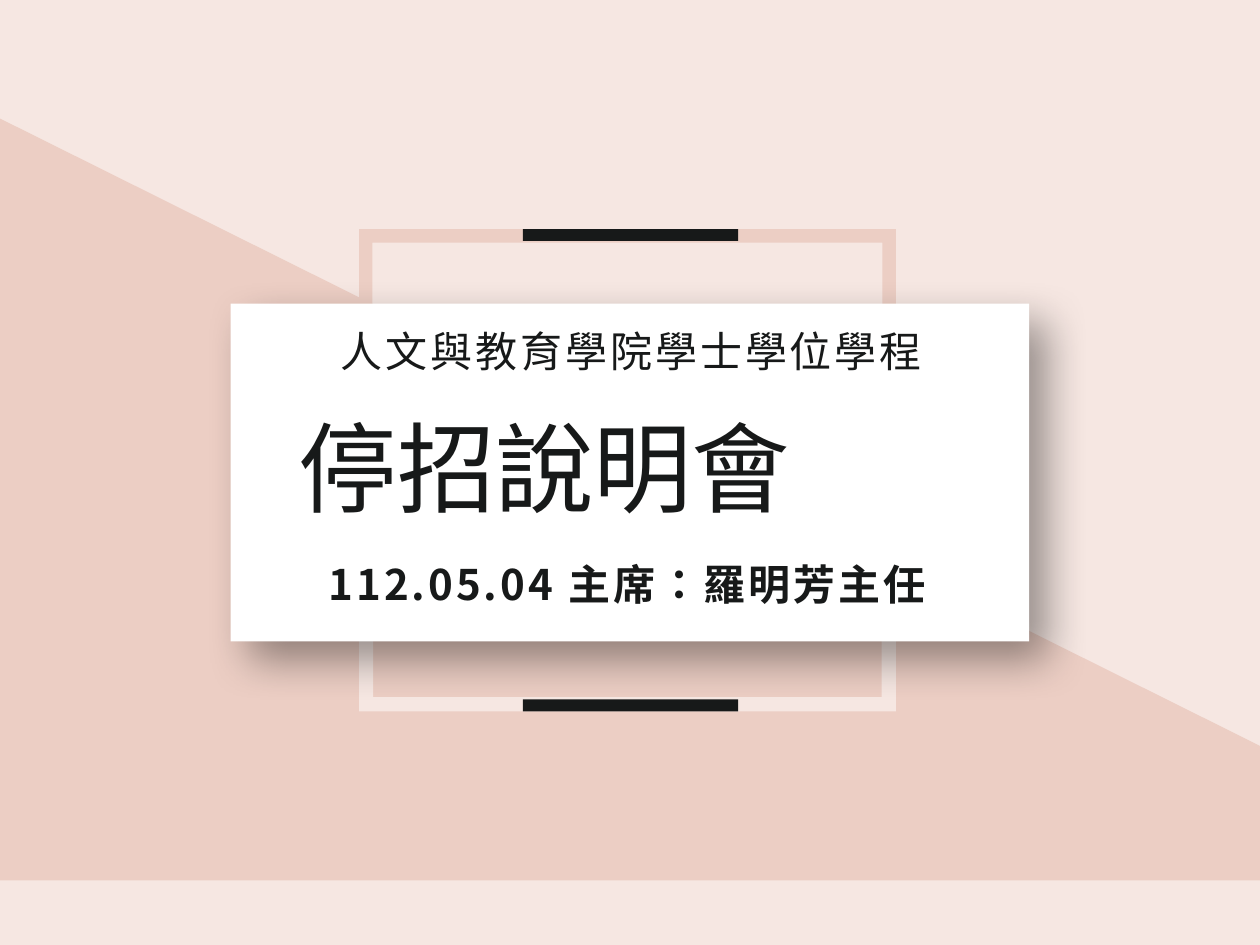
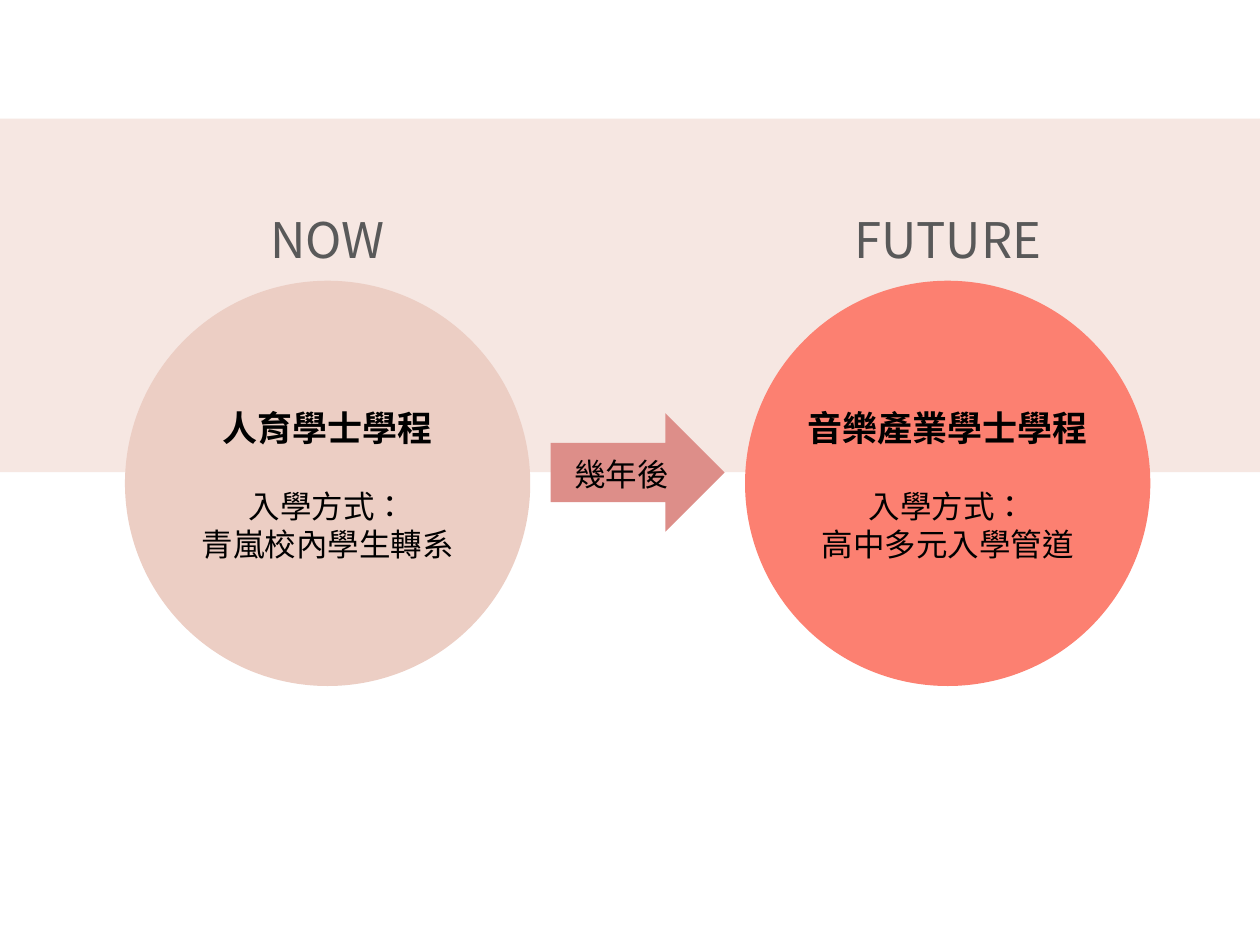
import pptx
import pptx.dml.color
import pptx.enum.shapes
import pptx.enum.text
import pptx.oxml
import pptx.oxml.ns
import pptx.util
from lxml import etree

Cm = pptx.util.Cm
Pt = pptx.util.Pt
RGBColor = pptx.dml.color.RGBColor
SHAPE = pptx.enum.shapes.MSO_SHAPE
ALIGN = pptx.enum.text.PP_ALIGN
qn = pptx.oxml.ns.qn

FONT = "Noto Sans CJK SC"
BLUSH = RGBColor(0xF6, 0xE7, 0xE2)
ROSE = RGBColor(0xEC, 0xCE, 0xC4)
CORAL = RGBColor(0xFC, 0x80, 0x71)
DUSTY = RGBColor(0xDD, 0x8E, 0x89)
INK = RGBColor(0x17, 0x19, 0x19)
GREY = RGBColor(0x59, 0x59, 0x59)
BLACK = RGBColor(0, 0, 0)
WHITE = RGBColor(0xFF, 0xFF, 0xFF)

SLIDE_WIDTH, SLIDE_HEIGHT = 25.4, 19.05
BAND_TOP = 2.39
TITLE_ONLY, BLANK = 5, 6


def add_slide(deck, layout, background):
    slide = deck.slides.add_slide(deck.slide_layouts[layout])
    slide.background.fill.solid()
    slide.background.fill.fore_color.rgb = background
    return slide


def add_block(slide, preset, box, colour):
    block = slide.shapes.add_shape(preset, *map(Cm, box))
    block.shadow.inherit = False
    block.fill.solid()
    block.fill.fore_color.rgb = colour
    block.line.fill.background()
    return block


def cast_shadow(block):
    effects = block._element.spPr.find(qn("a:effectLst"))
    shadow = etree.SubElement(
        effects, qn("a:outerShdw"), blurRad=str(Pt(25)), dist=str(Pt(15)),
        dir=str(45 * 60000), algn="tl", rotWithShape="0")
    colour = etree.SubElement(shadow, qn("a:srgbClr"), val="000000")
    etree.SubElement(colour, qn("a:alpha"), val="38000")


def add_text_box(slide, box, wrap=True):
    frame = slide.shapes.add_textbox(*map(Cm, box)).text_frame
    frame.word_wrap = wrap
    frame.auto_size = pptx.enum.text.MSO_AUTO_SIZE.SHAPE_TO_FIT_TEXT
    return frame


def write(paragraph, text, size, colour, align=ALIGN.CENTER, bold=False, spacing=0):
    paragraph.alignment = align
    run = paragraph.add_run()
    run.text = text
    run.font.size = Pt(size)
    run.font.bold = bold
    run.font.name = FONT
    run.font.color.rgb = colour
    properties = run.font._element
    properties.set("lang", "zh-TW")
    etree.SubElement(properties, qn("a:ea"), typeface=FONT)
    if spacing:
        properties.set("spc", str(int(spacing * 100)))


def add_frames(slide, left, top, width, height):
    for offset, frame_height, colour in ((2.0, height - 2.0, BLUSH), (0, 7.32, ROSE)):
        frame = add_block(slide, SHAPE.FRAME, (left, top + offset, width, frame_height), colour)
        frame.adjustments[0] = 0.037


def add_accents(slide, left, top, width, height):
    bar_width, bar_height = 4.34, 0.24
    bar_left = left + (width - bar_width) / 2 + 0.06
    for bar_top in (top, top + height - bar_height):
        add_block(slide, SHAPE.RECTANGLE, (bar_left, bar_top, bar_width, bar_height), INK)


def add_card_line(slide, box, text, bold=False):
    frame = add_text_box(slide, box)
    frame.margin_left = frame.margin_right = Cm(0.15)
    frame.margin_top = frame.margin_bottom = Cm(0.08)
    write(frame.paragraphs[0], text, 24, INK, bold=bold, spacing=1.7)


def place_title(slide, box, text):
    title = slide.shapes.title
    title.left, title.top, title.width, title.height = map(Cm, box)
    frame = title.text_frame
    frame.vertical_anchor = pptx.enum.text.MSO_ANCHOR.TOP
    frame.auto_size = pptx.enum.text.MSO_AUTO_SIZE.SHAPE_TO_FIT_TEXT
    write(frame.paragraphs[0], text, 56.2, INK, ALIGN.JUSTIFY)
    slide.shapes._spTree.append(title._element)


def add_card(slide, left, top, width, height):
    cast_shadow(add_block(slide, SHAPE.RECTANGLE, (left, top, width, height), WHITE))
    add_card_line(slide, (left + 0.23, top + 0.36, 15.7, 1.17), "人文與教育學院學士學位學程")
    place_title(slide, (left + 1.12, top + 1.96, 14.07, 2.67), "停招說明會")
    add_card_line(slide, (left + 0.07, top + 5.06, 15.85, 1.17), "112.05.04 主席：羅明芳主任", bold=True)


def build_cover(deck):
    slide = add_slide(deck, TITLE_ONLY, BLUSH)
    add_block(slide, SHAPE.RIGHT_TRIANGLE, (0, BAND_TOP, 30.85, 15.36), ROSE)
    emblem = (7.24, 4.62, 10.82, 9.72)
    add_frames(slide, *emblem)
    add_card(slide, 4.65, 6.12, 16.1, 6.81)
    add_accents(slide, *emblem)


def add_stage(slide, left, top, diameter, colour, label, programme, admission):
    centre = left + diameter / 2
    label_width, details_width = 6.43, 7.14
    heading = add_text_box(slide, (centre - label_width / 2, top - 1.57, label_width, 1.45))
    write(heading.paragraphs[0], label, 28, GREY)
    add_block(slide, SHAPE.OVAL, (left, top, diameter, diameter), colour)
    details = add_text_box(slide, (centre - details_width / 2, top + 2.42, details_width, 3.43))
    write(details.paragraphs[0], programme, 20, BLACK, bold=True)
    method = details.add_paragraph()
    method.space_before = Pt(22)
    write(method, "入學方式：", 18, BLACK)
    write(details.add_paragraph(), admission, 18, BLACK)


def add_transition(slide, left, top, width, height):
    add_block(slide, SHAPE.RIGHT_ARROW, (left, top, width, height), DUSTY)
    caption = add_text_box(slide, (left + 0.23, top + 0.71, 2.44, 1.02), wrap=False)
    write(caption.paragraphs[0], "幾年後", 18, BLACK, ALIGN.LEFT)


def build_comparison(deck):
    slide = add_slide(deck, BLANK, WHITE)
    add_block(slide, SHAPE.RECTANGLE, (0, BAND_TOP, SLIDE_WIDTH, 7.13), BLUSH)
    stages = (
        (2.52, ROSE, "NOW", "人育學士學程", "青嵐校內學生轉系"),
        (15.02, CORAL, "FUTURE", "音樂產業學士學程", "高中多元入學管道"),
    )
    for left, *content in stages:
        add_stage(slide, left, 5.66, 8.17, *content)
    add_transition(slide, 11.1, 8.33, 3.51, 2.39)


def main():
    deck = pptx.Presentation()
    deck.slide_width, deck.slide_height = Cm(SLIDE_WIDTH), Cm(SLIDE_HEIGHT)
    build_cover(deck)
    build_comparison(deck)
    deck.save("out.pptx")


if __name__ == "__main__":
    main()
